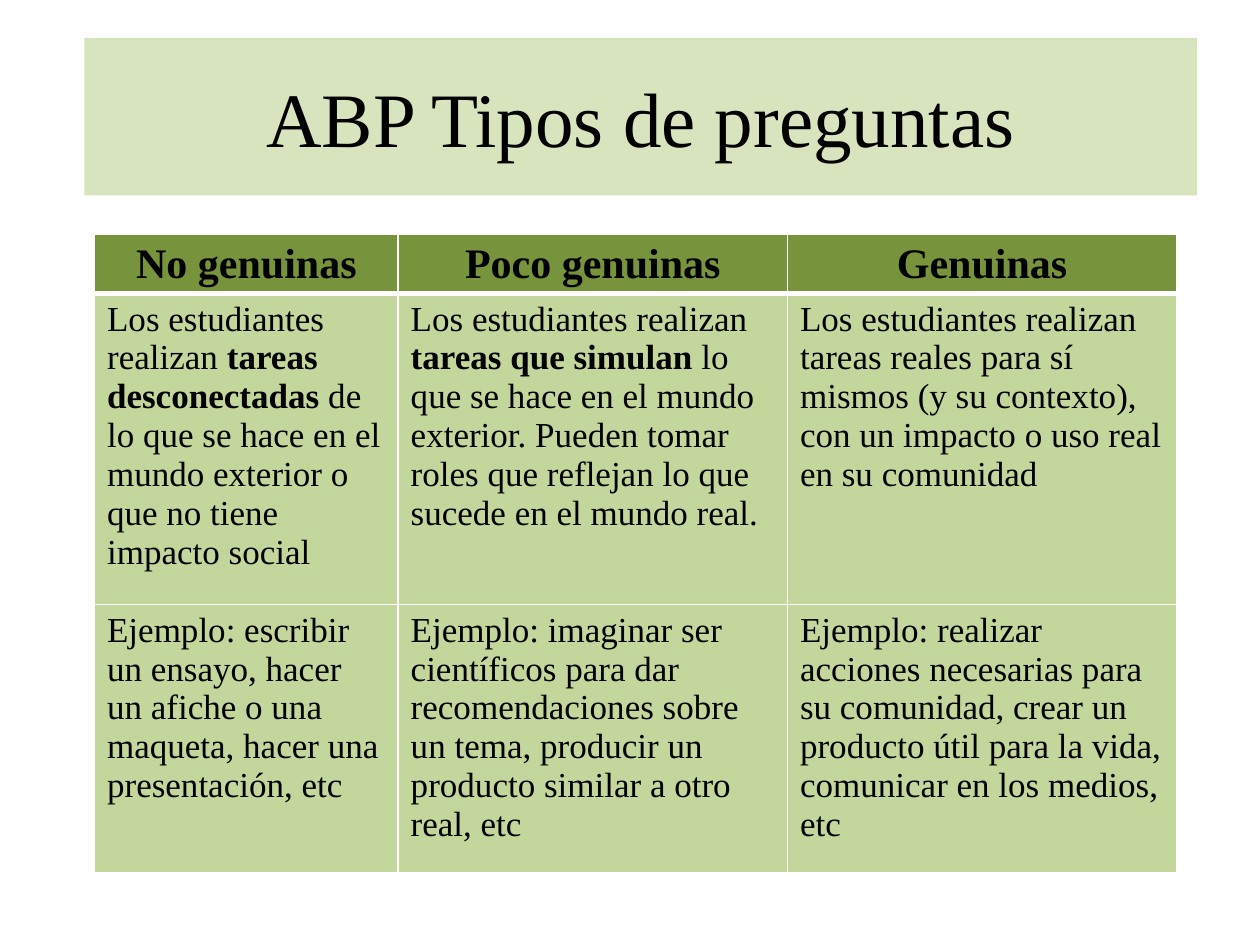
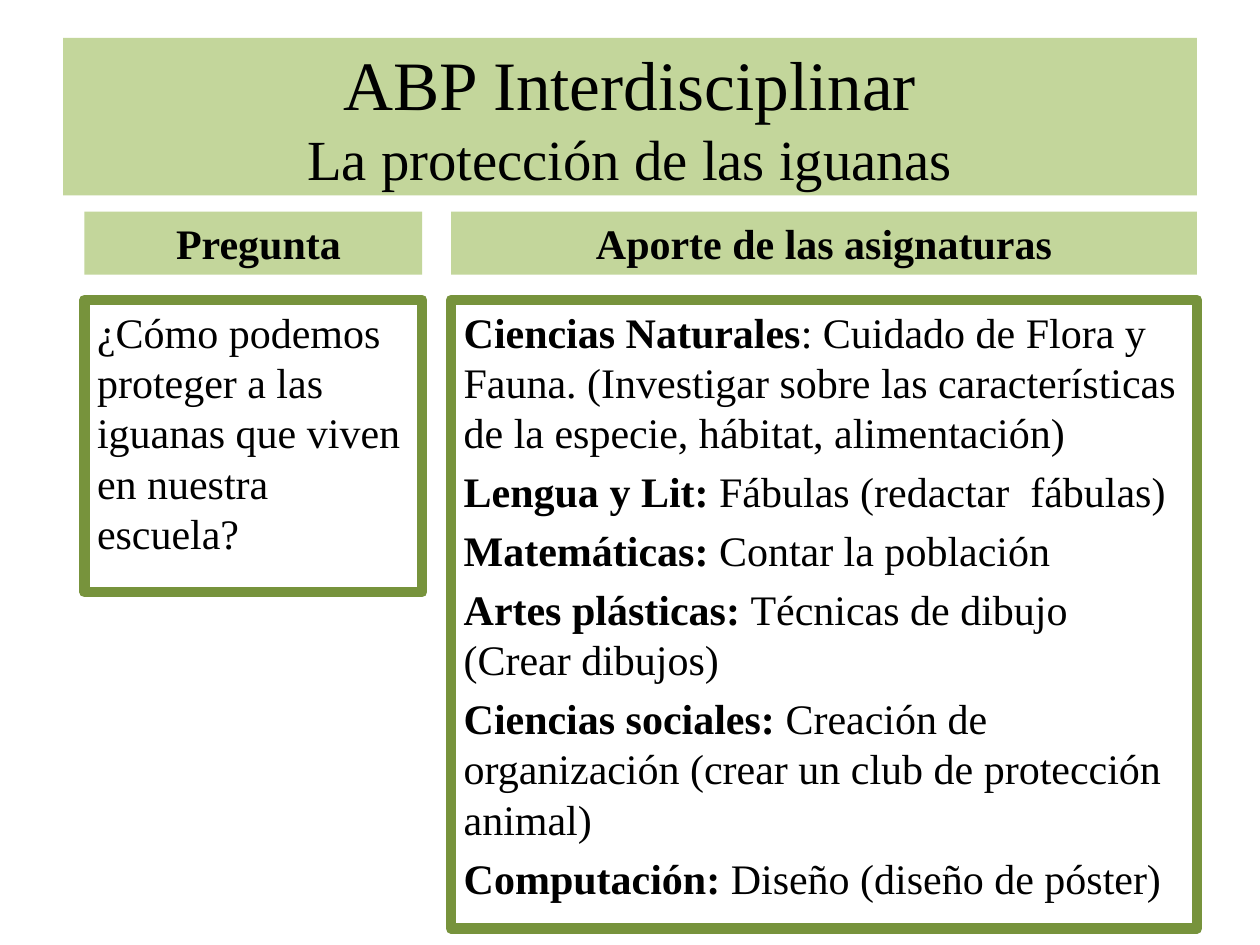
from lxml.etree import SubElement
from pptx import Presentation
from pptx.dml.color import RGBColor
from pptx.enum.text import MSO_AUTO_SIZE, PP_ALIGN
from pptx.oxml import parse_xml
from pptx.oxml.ns import nsdecls, qn
from pptx.util import Inches, Pt

FONT = "Times New Roman"
BLACK = "000000"
WHITE = "FFFFFF"
PALE_GREEN = "D7E4BD"
LIGHT_GREEN = "C3D69B"
DARK_GREEN = "77933C"

TITLE_TOP, TITLE_HEIGHT = 0.3, 1.25
RIGHT_EDGE = 9.5
TITLE_ONLY, COMPARISON = 5, 4

QUESTION_TYPES = [
    ["No genuinas", "Poco genuinas", "Genuinas"],
    [
        "Los estudiantes realizan **tareas desconectadas **de lo que se hace en el "
        "mundo exterior o que no tiene impacto social",
        "Los estudiantes realizan **tareas que simulan **lo que se hace en el mundo "
        "exterior. Pueden tomar roles que reflejan lo que sucede en el mundo real.",
        "Los estudiantes realizan tareas reales para sí mismos (y su contexto), "
        "con un impacto o uso real en su comunidad",
    ],
    [
        "Ejemplo: escribir un ensayo, hacer un afiche o una maqueta, hacer una "
        "presentación, etc",
        "Ejemplo: imaginar ser científicos para dar recomendaciones sobre un tema, "
        "producir un producto similar a otro real, etc",
        "Ejemplo: realizar acciones necesarias para su comunidad, crear un producto "
        "útil para la vida, comunicar en los medios, etc",
    ],
]

QUESTION = ["¿Cómo podemos proteger a las iguanas que viven en nuestra escuela?"]
SUBJECTS = [
    "**Ciencias Naturales**: Cuidado de Flora y Fauna. (Investigar sobre las "
    "características de la especie, hábitat, alimentación)",
    "**Lengua y Lit:** Fábulas (redactar  fábulas)",
    "**Matemáticas:** Contar la población",
    "**Artes plásticas: **Técnicas de dibujo (Crear dibujos)",
    "**Ciencias sociales:** Creación de organización (crear un club de protección animal)",
    "**Computación:** Diseño (diseño de póster)",
]


def color(value):
    return RGBColor.from_string(value)


def set_fill(item, value):
    item.fill.solid()
    item.fill.fore_color.rgb = color(value)


def place(shape, left, top, width, height):
    shape.left, shape.top = Inches(left), Inches(top)
    shape.width, shape.height = Inches(width), Inches(height)
    shape.text_frame.auto_size = MSO_AUTO_SIZE.NONE


def format_paragraph(paragraph, size, bold=False, centered=False):
    paragraph.font.name = FONT
    paragraph.font.size = Pt(size)
    paragraph.font.bold = bold
    paragraph.font.color.rgb = color(BLACK)
    if centered:
        paragraph.alignment = PP_ALIGN.CENTER


def write_marked(paragraph, text):
    """Add the text as runs; parts between ** marks are bold."""
    for index, part in enumerate(text.split("**")):
        if part:
            run = paragraph.add_run()
            run.text = part
            if index % 2:
                run.font.bold = True


def remove_bullet(paragraph):
    properties = paragraph._p.get_or_add_pPr()
    properties.set("marL", "0")
    properties.set("indent", "0")
    properties.insert(0, parse_xml(f"<a:buNone {nsdecls('a')}/>"))


def add_title(slide, text, left, fill, size, subtitle=None, subtitle_size=None):
    title = slide.shapes.title
    place(title, left, TITLE_TOP, RIGHT_EDGE - left, TITLE_HEIGHT)
    set_fill(title, fill)
    paragraph = title.text_frame.paragraphs[0]
    format_paragraph(paragraph, size, centered=True)
    paragraph.add_run().text = text
    if subtitle:
        paragraph.add_line_break()
        run = paragraph.add_run()
        run.text = subtitle
        run.font.size = Pt(subtitle_size)


def set_borders(cell, widths):
    """Draw white borders; widths gives points for left, right, top, bottom."""
    properties = cell._tc.get_or_add_tcPr()
    for index, (side, width) in enumerate(zip("LRTB", widths)):
        line = parse_xml(f'<a:ln{side} {nsdecls("a")} w="{Pt(width)}"/>')
        fill = SubElement(line, qn("a:solidFill"))
        SubElement(fill, qn("a:srgbClr"), val=WHITE)
        properties.insert(index, line)


def add_question_table(slide):
    column_widths, row_heights = [2.41, 3.09, 3.09], [0.46, 2.47, 2.13]
    frame = slide.shapes.add_table(
        len(row_heights), len(column_widths), Inches(0.75), Inches(1.86),
        Inches(sum(column_widths)), Inches(sum(row_heights)))
    table = frame.table
    for column, width in zip(table.columns, column_widths):
        column.width = Inches(width)
    for row, height in zip(table.rows, row_heights):
        row.height = Inches(height)
    for row_index, texts in enumerate(QUESTION_TYPES):
        header = row_index == 0
        for column_index, text in enumerate(texts):
            cell = table.cell(row_index, column_index)
            set_fill(cell, DARK_GREEN if header else LIGHT_GREEN)
            set_borders(cell, (1, 1, 3 if row_index == 1 else 1, 3 if header else 1))
            paragraph = cell.text_frame.paragraphs[0]
            format_paragraph(paragraph, 24 if header else 20, header, header)
            write_marked(paragraph, text)


def add_column(heading, body, left, width, heading_text, body_texts, body_height):
    """Fill a band placeholder and the framed list placeholder below it."""
    place(heading, left, 1.68, width, 0.5)
    set_fill(heading, LIGHT_GREEN)
    paragraph = heading.text_frame.paragraphs[0]
    format_paragraph(paragraph, 24, bold=True, centered=True)
    paragraph.add_run().text = heading_text

    place(body, left, 2.38, width, body_height)
    body.line.color.rgb = color(DARK_GREEN)
    body.line.width = Pt(6)
    frame = body.text_frame
    for index, text in enumerate(body_texts):
        paragraph = frame.add_paragraph() if index else frame.paragraphs[0]
        remove_bullet(paragraph)
        format_paragraph(paragraph, 24)
        write_marked(paragraph, text)


def add_slide(presentation, layout_index):
    """Add a slide without its date, footer and number placeholders."""
    return presentation.slides.add_slide(presentation.slide_layouts[layout_index])


def main():
    presentation = Presentation()
    presentation.slide_width, presentation.slide_height = Inches(10), Inches(7.5)

    slide = add_slide(presentation, TITLE_ONLY)
    add_title(slide, "ABP Tipos de preguntas", 0.67, PALE_GREEN, 44)
    add_question_table(slide)

    slide = add_slide(presentation, COMPARISON)
    add_title(slide, "ABP Interdisciplinar", 0.5, LIGHT_GREEN, 39.6,
              "La protección de las iguanas", 32.4)
    _, left_heading, left_body, right_heading, right_body = slide.placeholders
    add_column(left_heading, left_body, 0.67, 2.68, " Pregunta", QUESTION, 2.32)
    add_column(right_heading, right_body, 3.58, 5.92,
               "Aporte de las asignaturas", SUBJECTS, 4.99)


    presentation.save("out.pptx")


if __name__ == "__main__":
    main()
